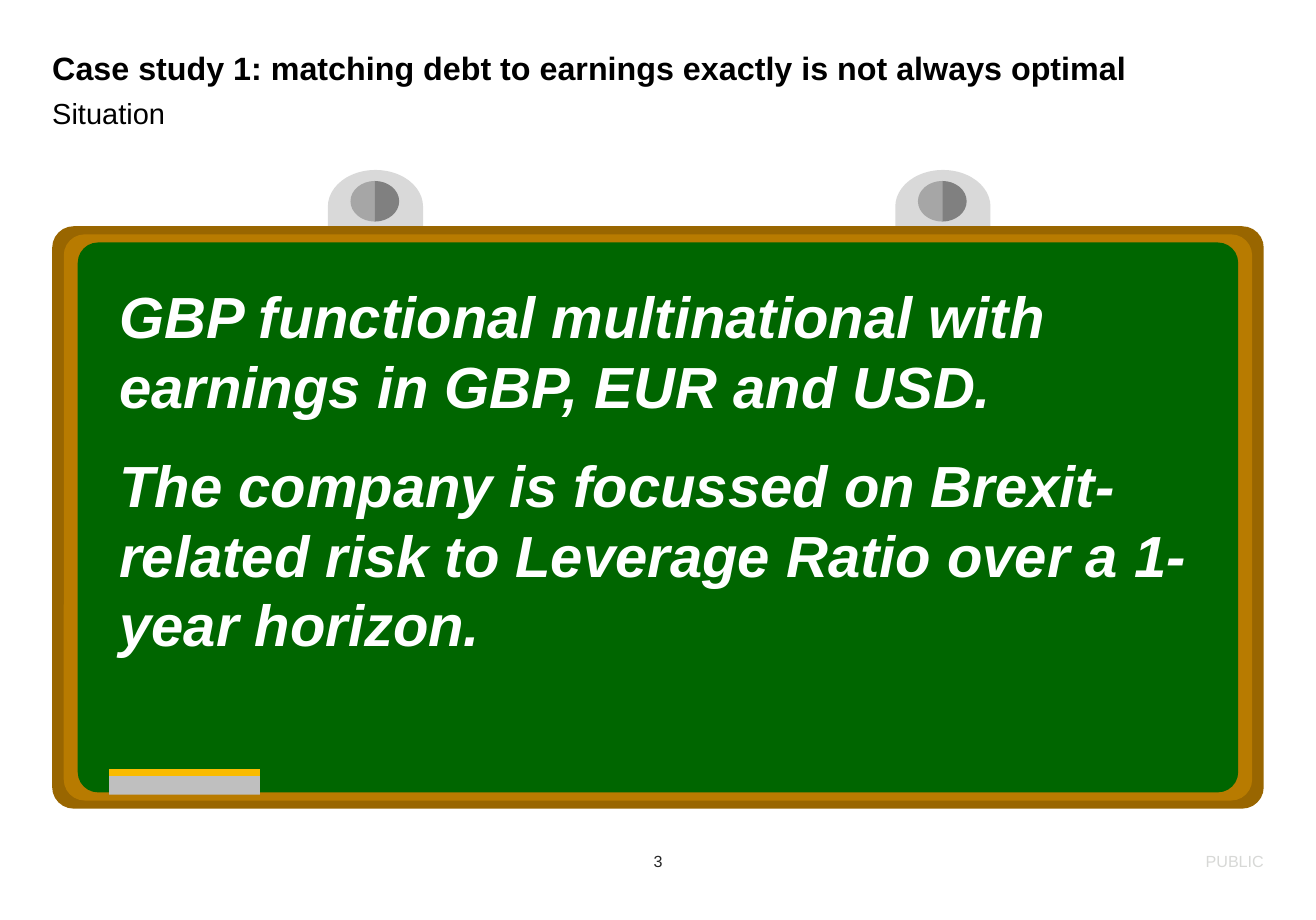
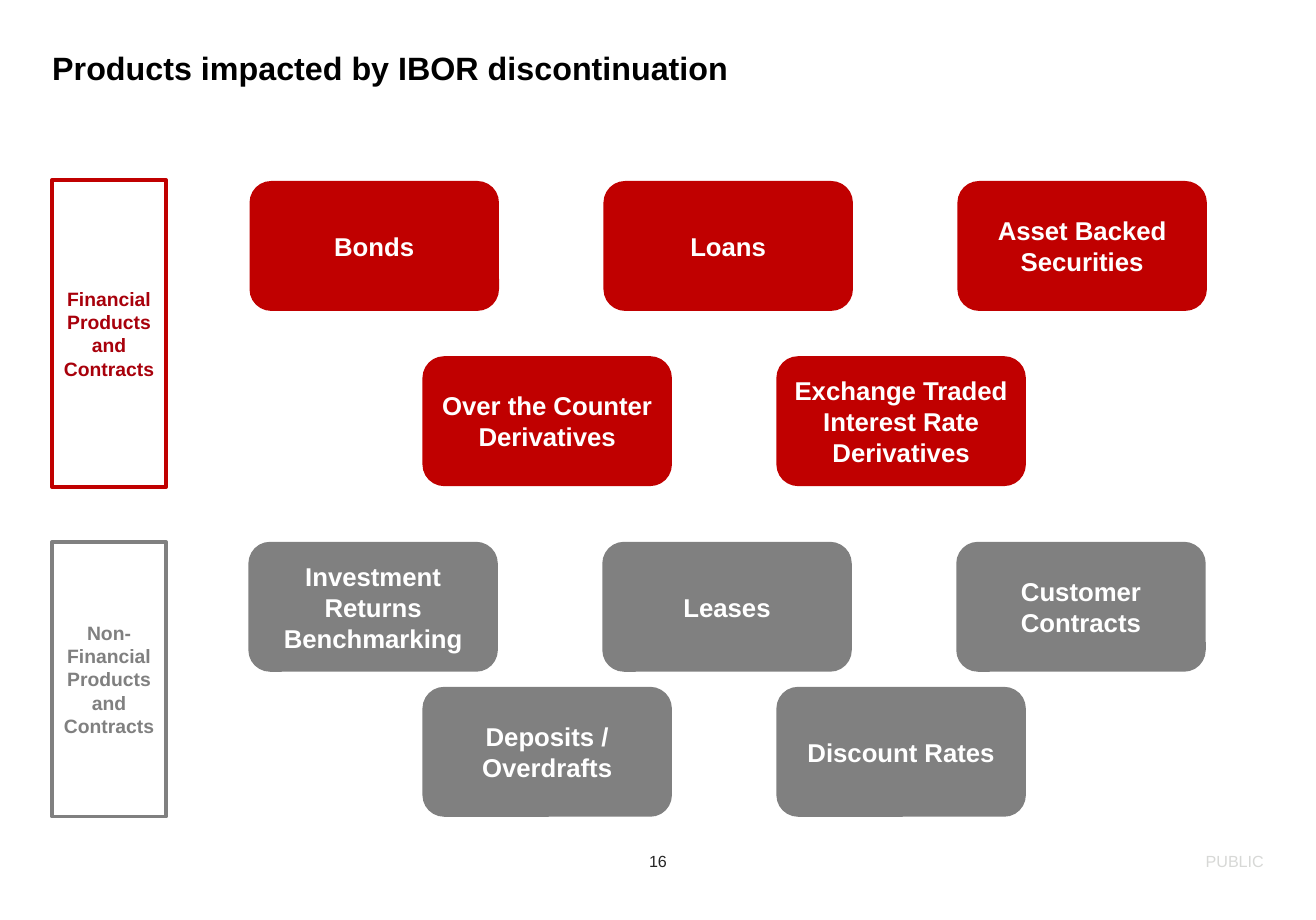
from lxml import etree
from pptx import Presentation
from pptx.dml.color import RGBColor
from pptx.enum.shapes import MSO_SHAPE
from pptx.enum.text import MSO_ANCHOR, MSO_AUTO_SIZE, PP_ALIGN
from pptx.oxml.ns import qn
from pptx.util import Inches, Pt

RECTANGLE = MSO_SHAPE.RECTANGLE
ROUNDED = MSO_SHAPE.ROUNDED_RECTANGLE
DELAY = MSO_SHAPE.FLOWCHART_DELAY
TOP, MIDDLE = MSO_ANCHOR.TOP, MSO_ANCHOR.MIDDLE
NO_AUTOFIT = MSO_AUTO_SIZE.NONE
LEFT, CENTER, RIGHT = PP_ALIGN.LEFT, PP_ALIGN.CENTER, PP_ALIGN.RIGHT

BLACK = RGBColor(0x00, 0x00, 0x00)
WHITE = RGBColor(0xFF, 0xFF, 0xFF)
PAGE_INK = RGBColor(0x25, 0x25, 0x25)
FOOTER_GRAY = RGBColor(0xD7, 0xD8, 0xD6)
CLIP_GRAY = RGBColor(0xD9, 0xD9, 0xD9)
LIGHT_GRAY = RGBColor(0xA6, 0xA6, 0xA6)
ERASER_GRAY = RGBColor(0xBF, 0xBF, 0xBF)
GRAY = RGBColor(0x80, 0x80, 0x80)
RED = RGBColor(0xC0, 0x00, 0x00)
DARK_RED = RGBColor(0xA8, 0x00, 0x0B)
DARK_WOOD = RGBColor(0x99, 0x66, 0x00)
LIGHT_WOOD = RGBColor(0xB8, 0x7B, 0x00)
BOARD_GREEN = RGBColor(0x00, 0x66, 0x00)
YELLOW = RGBColor(0xFA, 0xBB, 0x00)

FONT = "Arial"
MARGIN = 0.45
CONTENT_WIDTH = 10.43
FOOTER_TOP = 7.33
BOX_WIDTH, BOX_HEIGHT, BOX_STEP = 2.15, 1.12, 3.05


def write_text(shape, *texts, size, color, bold=False, italic=False, align=LEFT,
               anchor=TOP, inset=0, line_spacing=1.0, before=0, gap=0):
    """Fill a shape with one formatted paragraph for each text."""
    frame = shape.text_frame
    frame.word_wrap = True
    frame.auto_size = NO_AUTOFIT
    frame.vertical_anchor = anchor
    frame.margin_left = frame.margin_right = Inches(inset)
    frame.margin_top = frame.margin_bottom = Inches(min(inset, 0.05))
    for index, text in enumerate(texts):
        paragraph = frame.add_paragraph() if index else frame.paragraphs[0]
        paragraph.alignment = align
        paragraph.line_spacing = line_spacing
        paragraph.space_before = Pt(gap if index else before)
        run = paragraph.add_run()
        run.text = text
        font = run.font
        font.name, font.size = FONT, Pt(size)
        font.bold, font.italic = bold, italic
        font.color.rgb = color


class Deck:
    """Hold the presentation, its shared style and the current slide."""

    def __init__(self):
        self.presentation = Presentation()
        self.presentation.slide_width = Inches(11.34)
        self.presentation.slide_height = Inches(7.93)
        self.slide = None

    def place(self, shape, left, top, width, height):
        """Move and size a shape in inches."""
        shape.left, shape.top = Inches(left), Inches(top)
        shape.width, shape.height = Inches(width), Inches(height)

    def new_slide(self, title, number, subtitle=None):
        """Start a slide with its title, optional subtitle and footer."""
        layout = self.presentation.slide_layouts[1 if subtitle else 5]
        self.slide = self.presentation.slides.add_slide(layout)
        heading = self.slide.shapes.title
        self.place(heading, MARGIN, 0.45, CONTENT_WIDTH, 0.27)
        write_text(heading, title, size=20, color=BLACK, bold=True, line_spacing=0.9)
        if subtitle:
            self.subtitle(subtitle)
        self.text((5.17, FOOTER_TOP, 1, 0.19), str(number), size=10,
                  color=PAGE_INK, align=CENTER, anchor=MIDDLE)
        self.text((8.36, FOOTER_TOP, 2.53, 0.19), "PUBLIC", size=10,
                  color=FOOTER_GRAY, align=RIGHT, anchor=MIDDLE)

    def subtitle(self, text):
        """Write the body placeholder as an unbulleted subtitle."""
        body = self.slide.placeholders[1]
        self.place(body, MARGIN, 0.82, CONTENT_WIDTH, 0.3)
        write_text(body, text, size=18, color=BLACK, before=2)
        properties = body.text_frame.paragraphs[0]._p.get_or_add_pPr()
        properties.set("marL", "0")
        properties.set("indent", "0")
        etree.SubElement(properties, qn("a:buNone"))

    def text(self, box, *texts, **style):
        """Add a text box."""
        shape = self.slide.shapes.add_textbox(*map(Inches, box))
        write_text(shape, *texts, **style)

    def paint(self, shape, fill=None, line=None):
        """Give a shape a flat fill and an optional outline."""
        shape.shadow.inherit = False
        if fill is None:
            shape.fill.background()
        else:
            shape.fill.solid()
            shape.fill.fore_color.rgb = fill
        if line is None:
            shape.line.fill.background()
        else:
            shape.line.color.rgb = line
            shape.line.width = Pt(2.25)

    def shape(self, kind, box, fill=None, line=None, corner=None, rotation=0):
        """Add a preset shape and return it."""
        shape = self.slide.shapes.add_shape(kind, *map(Inches, box))
        self.paint(shape, fill, line)
        shape.rotation = rotation
        if corner is not None:
            shape.adjustments[0] = corner
        return shape

    def half_disc(self, center_x, center_y, side, fill):
        """Add the left (-1) or right (1) half of a clip's hole as two curves."""
        offsets = ((0, -1), (0.55, -1), (1, -0.55), (1, 0), (1, 0.55), (0.55, 1), (0, 1))
        points = [(Inches(center_x + side * 0.21 * across), Inches(center_y + 0.175 * down))
                  for across, down in offsets]
        builder = self.slide.shapes.build_freeform(*points[0])
        builder.add_line_segments(points[1:], close=True)
        shape = builder.convert_to_shape()
        segments = list(shape._element.iter(qn("a:lnTo")))
        for first in (0, 3):
            curve = etree.Element(qn("a:cubicBezTo"))
            segments[first].addprevious(curve)
            for segment in segments[first:first + 3]:
                curve.append(segment[0])
                segment.getparent().remove(segment)
        self.paint(shape, fill)

    def clip(self, center_x):
        """Add a board clip with its two-tone hole."""
        self.shape(DELAY, (center_x - 0.31, 1.37, 0.63, 0.82), CLIP_GRAY, rotation=270)
        for side, fill in ((-1, LIGHT_GRAY), (1, GRAY)):
            self.half_disc(center_x, 1.735, side, fill)

    def category(self, top, height, text, line, color):
        """Add an outlined category label."""
        shape = self.shape(RECTANGLE, (MARGIN, top, 0.98, height), line=line)
        write_text(shape, text, size=12, color=color, bold=True,
                   align=CENTER, anchor=MIDDLE, inset=0.09)

    def product_row(self, left, top, fill, names):
        """Add a row of evenly spaced product boxes."""
        for index, name in enumerate(names):
            box = (left + index * BOX_STEP, top, BOX_WIDTH, BOX_HEIGHT)
            shape = self.shape(ROUNDED, box, fill)
            write_text(shape, name, size=16, color=WHITE, bold=True,
                       align=CENTER, anchor=MIDDLE, inset=0.09)


def build_case_study(deck):
    """Build the chalkboard slide."""
    deck.new_slide("Case study 1: matching debt to earnings exactly is not always optimal",
                   3, "Situation")
    for center_x in (3.23, 8.12):
        deck.clip(center_x)
    for box, fill in (((0.45, 1.95, 10.44, 5.02), DARK_WOOD),
                      ((0.55, 2.02, 10.24, 4.88), LIGHT_WOOD),
                      ((0.67, 2.09, 10, 4.74), BOARD_GREEN)):
        deck.shape(ROUNDED, box, fill, corner=0.037)
    deck.shape(RECTANGLE, (0.94, 6.63, 1.3, 0.06), YELLOW)
    deck.shape(RECTANGLE, (0.94, 6.69, 1.3, 0.16), ERASER_GRAY)
    deck.text((0.93, 2.37, 9.45, 3.43),
              "GBP functional multinational with earnings in GBP, EUR and USD.",
              "The company is focussed on Brexit-related risk to Leverage Ratio "
              "over a 1-year horizon.",
              size=36, color=WHITE, bold=True, italic=True, inset=0.1, gap=18.5)


def build_products(deck):
    """Build the slide of impacted products."""
    deck.new_slide("Products impacted by IBOR discontinuation", 16)
    rows = (
        (2.15, 1.56, RED, ("Bonds", "Loans", "Asset Backed Securities")),
        (3.64, 3.07, RED, ("Over the Counter Derivatives",
                           "Exchange Traded Interest Rate Derivatives")),
        (2.14, 4.67, GRAY, ("Investment Returns Benchmarking", "Leases",
                            "Customer Contracts")),
        (3.64, 5.92, GRAY, ("Deposits / Overdrafts", "Discount Rates")),
    )
    for row in rows:
        deck.product_row(*row)
    deck.category(1.55, 2.65, "Financial Products and Contracts", RED, DARK_RED)
    deck.category(4.67, 2.37, "Non-Financial Products and Contracts", GRAY, GRAY)


def main():
    """Build and save the presentation."""
    deck = Deck()
    build_case_study(deck)
    build_products(deck)
    deck.presentation.save("out.pptx")


if __name__ == "__main__":
    main()
